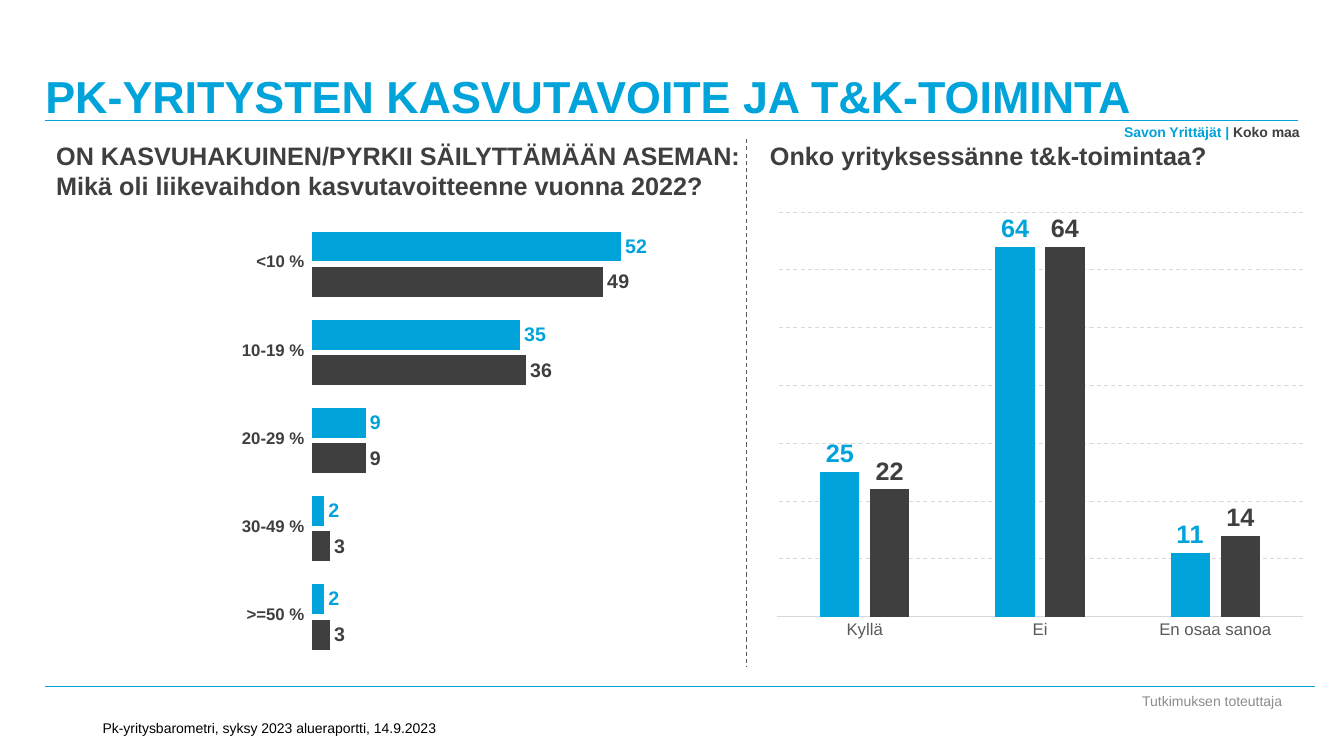
from dataclasses import dataclass

from lxml import etree
from pptx import Presentation
from pptx import util as u
from pptx.chart import data as chart_data
from pptx.dml.color import RGBColor
from pptx.enum import chart as charts, dml, shapes, text
from pptx.oxml import ns

Pt = u.Pt


@dataclass(frozen=True)
class Theme:
    font: str = "Arial"
    blue: str = "00A3DA"
    dark: str = "3F3F3F"
    axis_text: str = "595959"
    credit: str = "8C8C8C"
    grid: str = "D9D9D9"
    black: str = "000000"
    title: int = 32
    heading: int = 18
    value: int = 14
    label: int = 12
    small: int = 10
    hairline: float = 0.75


def color(code):
    return RGBColor.from_string(code)


class SlideBuilder:
    """Keeps the theme and the page being filled."""

    def __init__(self, page, theme):
        self.page = page
        self.theme = theme

    def style_font(self, font, size, code, bold=False):
        font.name = self.theme.font
        font.size = Pt(size)
        font.bold = bold
        font.color.rgb = color(code)

    def add_span(self, para, words, size, code, bold):
        span = para.add_run()
        span.text = words
        self.style_font(span.font, size, code, bold)

    def title(self, words, left, top, width, height):
        box = self.page.shapes.title
        box.left, box.top, box.width, box.height = map(Pt, (left, top, width, height))
        frame = box.text_frame
        frame.word_wrap = True
        frame.auto_size = text.MSO_AUTO_SIZE.NONE
        frame.vertical_anchor = text.MSO_ANCHOR.BOTTOM
        frame.margin_left = frame.margin_right = frame.margin_top = frame.margin_bottom = 0
        para = frame.paragraphs[0]
        para.alignment = text.PP_ALIGN.LEFT
        para.line_spacing = 1.0
        self.add_span(para, words, self.theme.title, self.theme.blue, True)

    def text(self, lines, left, top, width, height, size, bold=True,
             align=text.PP_ALIGN.LEFT, anchor=text.MSO_ANCHOR.TOP, spacing=None):
        """Each line is a list of (words, colour) spans."""
        box = self.page.shapes.add_textbox(*map(Pt, (left, top, width, height)))
        frame = box.text_frame
        frame.word_wrap = True
        frame.vertical_anchor = anchor
        para = frame.paragraphs[0]
        para.alignment = align
        para.line_spacing = spacing
        for number, line in enumerate(lines):
            if number:
                para.add_line_break()
            for words, code in line:
                self.add_span(para, words, size, code, bold)

    def line(self, x1, y1, x2, y2, code, dash=None):
        rule = self.page.shapes.add_connector(
            shapes.MSO_CONNECTOR.STRAIGHT, *map(Pt, (x1, y1, x2, y2)))
        rule.line.color.rgb = color(code)
        rule.line.width = Pt(self.theme.hairline)
        rule.line.dash_style = dash
        etree.SubElement(rule._element.spPr, ns.qn("a:effectLst"))

    def chart(self, kind, place, categories, series, top_value, step,
              gap, overlap, label_size, inner):
        theme = self.theme
        data = chart_data.CategoryChartData(number_format="#,##0")
        data.categories = categories
        for name, values in series:
            data.add_series(name, values)
        chart = self.page.shapes.add_chart(kind, *map(Pt, place), data).chart
        chart.has_title = False
        chart.has_legend = False
        self.style_font(chart.font, theme.small, theme.black)
        axis = chart.value_axis
        axis.minimum_scale, axis.maximum_scale, axis.major_unit = 0, top_value, step
        axis.visible = False
        axis.has_major_gridlines = False
        plot = chart.plots[0]
        plot.vary_by_categories = False
        plot.gap_width, plot.overlap = gap, overlap
        for bars, code in zip(plot.series, (theme.blue, theme.dark)):
            bars.format.fill.solid()
            bars.format.fill.fore_color.rgb = color(code)
            labels = bars.data_labels
            labels.show_value = True
            labels.position = charts.XL_LABEL_POSITION.OUTSIDE_END
            labels.number_format = "#,##0"
            labels.number_format_is_linked = False
            self.style_font(labels.font, label_size, code, True)
        self.place_plot(chart, inner)
        return chart

    def place_plot(self, chart, inner):
        area = chart._chartSpace.chart.plotArea
        for old in area.findall(ns.qn("c:layout")):
            area.remove(old)
        layout = etree.Element(ns.qn("c:layout"))
        area.insert(0, layout)
        manual = etree.SubElement(layout, ns.qn("c:manualLayout"))
        settings = [("layoutTarget", "inner"), ("xMode", "edge"), ("yMode", "edge")]
        for tag, value in settings + list(zip("xywh", inner)):
            etree.SubElement(manual, ns.qn("c:" + tag)).set("val", str(value))


def main():
    deck = Presentation()
    deck.slide_width, deck.slide_height = Pt(960), Pt(540)
    theme = Theme()
    page = deck.slides.add_slide(deck.slide_layouts[5])
    slide = SlideBuilder(page, theme)
    right = text.PP_ALIGN.RIGHT
    dash = dml.MSO_LINE.DASH

    # Title, rules and legend
    slide.title("PK-YRITYSTEN KASVUTAVOITE JA T&K-TOIMINTA", 32.4, 0, 885.6, 87.8)
    slide.line(32.4, 86.4, 927.4, 86.4, theme.blue)
    slide.line(32.4, 490.3, 939.6, 490.3, theme.blue)
    slide.line(533.5, 99.4, 533.5, 476.6, theme.axis_text, dash)
    slide.text([[("Savon Yrittäjät | ", theme.blue), ("Koko maa", theme.dark)]],
               585.4, 85, 350, 19.4, theme.small, align=right)

    # Growth targets, with category labels beside the bars
    slide.text([[("ON KASVUHAKUINEN/PYRKII SÄILYTTÄMÄÄN ASEMAN:", theme.dark)],
                [("Mikä oli liikevaihdon kasvutavoitteenne vuonna 2022?", theme.dark)]],
               33.1, 96.5, 518.4, 51, theme.heading)
    targets = ["<10 %", "10-19 %", "20-29 %", "30-49 %", ">=50 %"]
    growth = slide.chart(
        charts.XL_CHART_TYPE.BAR_CLUSTERED, (223.2, 124.6, 280.8, 348.5), targets,
        [("Savon Yrittäjät", (52, 35, 9, 2, 2)), ("Koko maa", (49, 36, 9, 3, 3))],
        60, 10, 75, -19, theme.value, (0, 0.094, 0.906, 0.903))
    growth.category_axis.reverse_order = True
    growth.category_axis.visible = False
    for row, target in enumerate(targets):
        slide.text([[(target, theme.dark)]], 8.6, 178.6 + 63 * row, 216, 18.7,
                   theme.label, align=right, spacing=0.8)

    # Research and development
    slide.text([[("Onko yrityksessänne t&k-toimintaa?", theme.dark)]],
               542.9, 96.5, 399.6, 28.8, theme.heading)
    research = slide.chart(
        charts.XL_CHART_TYPE.COLUMN_CLUSTERED, (547.2, 147.6, 394.6, 352.1),
        ["Kyllä", "Ei", "En osaa sanoa"],
        [("Savon Yrittäjät", (25, 64, 11)), ("Koko maa", (22, 64, 14))],
        70, 10, 219, -27, theme.heading, (0.02, 0.011, 0.952, 0.821))
    answers = research.category_axis
    answers.major_tick_mark = charts.XL_TICK_MARK.NONE
    slide.style_font(answers.tick_labels.font, theme.label, theme.axis_text)
    grid = research.value_axis.major_gridlines.format.line
    for stroke in (answers.format.line, grid):
        stroke.color.rgb = color(theme.grid)
        stroke.width = Pt(theme.hairline)
    grid.dash_style = dash

    # Footer
    slide.text([[("Tutkimuksen toteuttaja", theme.credit)]], 803.5, 491, 124.6, 18.7,
               theme.small, False, text.PP_ALIGN.CENTER, text.MSO_ANCHOR.MIDDLE)
    slide.text([[("Pk-yritysbarometri, syksy 2023 alueraportti, 14.9.2023", theme.black)]],
               66.2, 504, 300.2, 25.2, theme.small, False, anchor=text.MSO_ANCHOR.BOTTOM)

    deck.save("out.pptx")


if __name__ == "__main__":
    main()
